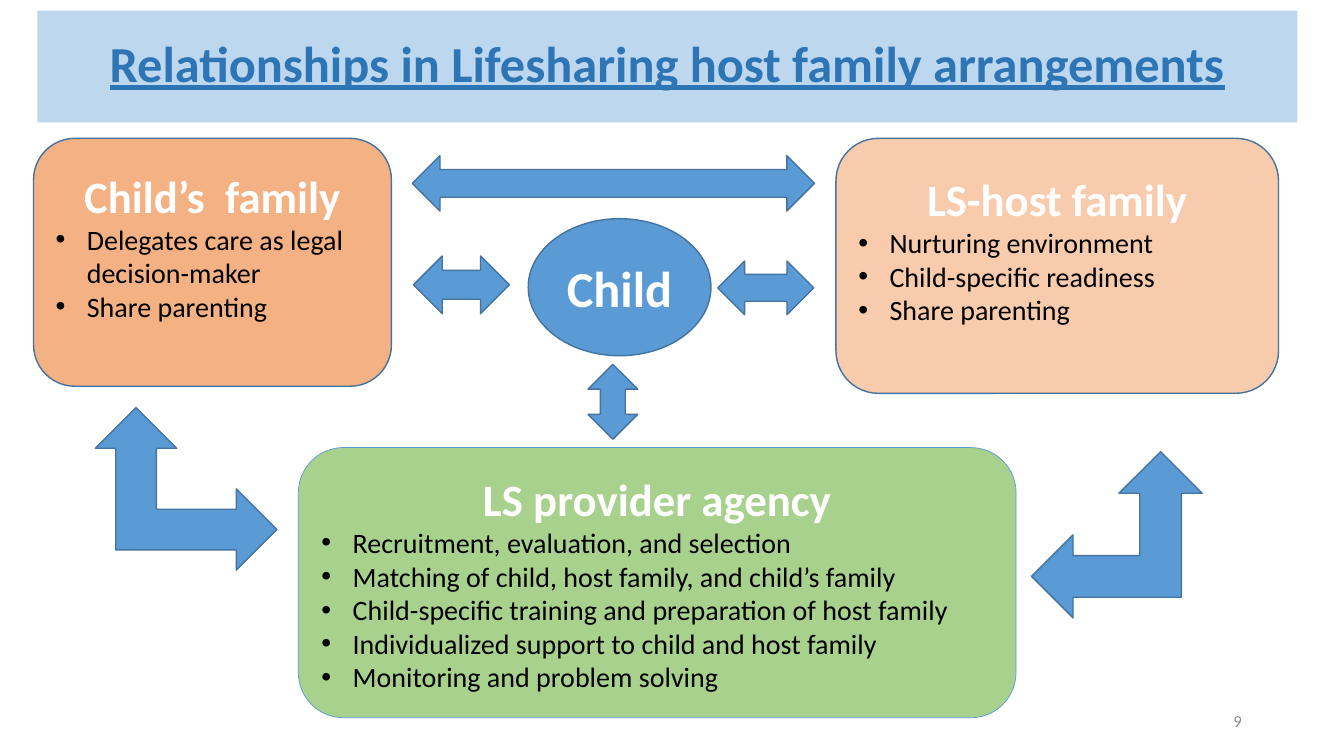
from dataclasses import dataclass

from lxml.etree import SubElement
from pptx import Presentation
from pptx.dml.color import RGBColor
from pptx.enum.shapes import MSO_SHAPE as Form
from pptx.enum.text import MSO_ANCHOR, PP_ALIGN
from pptx.oxml.ns import qn
from pptx.util import Inches, Pt


@dataclass(frozen=True)
class Theme:
    font: str = "Calibri"
    band: str = "BDD7EE"
    title: str = "2E75B6"
    blue: str = "5B9BD5"
    edge: str = "43739E"
    orange: str = "F4B183"
    peach: str = "F8CBAD"
    green: str = "A9D18E"
    white: str = "FFFFFF"
    black: str = "000000"
    gray: str = "8C8C8C"
    large: int = 36
    head: int = 32
    body: int = 20
    small: int = 12


class Board:
    """Draws on one slide; every place is left, top, width, height in percent."""

    def __init__(self, deck, theme):
        self.deck, self.theme = deck, theme
        self.slide = deck.slides.add_slide(deck.slide_layouts[6])

    def place(self, box):
        wide, high = self.deck.slide_width, self.deck.slide_height
        return [round(part * side / 100) for part, side in zip(box, (wide, high) * 2)]

    def shape(self, form, box, fill, edge=None, width=1, turn=0):
        item = self.slide.shapes.add_shape(form, *self.place(box))
        item.shadow.inherit = False
        item.fill.solid()
        item.fill.fore_color.rgb = RGBColor.from_string(fill)
        if edge:
            item.line.color.rgb = RGBColor.from_string(edge)
            item.line.width = Pt(width)
        else:
            item.line.fill.background()
        item.rotation = turn
        return item

    def frame(self, item):
        text = item.text_frame
        text.word_wrap = True
        text.vertical_anchor = MSO_ANCHOR.MIDDLE
        return text

    def label(self, para, words, size, color, bold=False, align=PP_ALIGN.CENTER):
        para.alignment = align
        run = para.add_run()
        run.text = words
        run.font.name = self.theme.font
        run.font.size = Pt(size)
        run.font.bold = bold
        run.font.color.rgb = RGBColor.from_string(color)
        return run

    def bullet(self, para, words):
        self.label(para, words, self.theme.body, self.theme.black, align=PP_ALIGN.LEFT)
        props = para._p.get_or_add_pPr()
        props.set("marL", str(Inches(0.31)))
        props.set("indent", str(-Inches(0.31)))
        SubElement(props, qn("a:buFont")).set("typeface", "Arial")
        SubElement(props, qn("a:buChar")).set("char", "•")

    def banner(self, box, words):
        look = self.theme
        para = self.frame(self.shape(Form.RECTANGLE, box, look.band)).paragraphs[0]
        para.line_spacing = 0.9
        self.label(para, words, look.large, look.title, True).font.underline = True

    def hub(self, box, words):
        look = self.theme
        item = self.shape(Form.OVAL, box, look.blue, look.edge)
        self.label(self.frame(item).paragraphs[0], words, look.large, look.white, True)

    def card(self, box, fill, head, points, edge, width=1, foot=0.05):
        """Rounded box with a heading and bullets; foot is the bottom inset in inches."""
        look = self.theme
        text = self.frame(self.shape(Form.ROUNDED_RECTANGLE, box, fill, edge, width))
        text.margin_bottom = Inches(foot)
        self.label(text.paragraphs[0], head, look.head, look.white, True)
        for point in points:
            self.bullet(text.add_paragraph(), point)

    def arrow(self, form, box, turn=0):
        self.shape(form, box, self.theme.blue, self.theme.edge, turn=turn)

    def number(self, box, words):
        text = self.frame(self.slide.shapes.add_textbox(*self.place(box)))
        self.label(text.paragraphs[0], words, self.theme.small, self.theme.gray,
                   align=PP_ALIGN.RIGHT)


def main():
    deck = Presentation()
    deck.slide_width, deck.slide_height = Inches(13.33), Inches(7.5)
    look = Theme()
    board = Board(deck, look)

    board.banner((2.78, 1.4, 93.75, 14.8),
                 "Relationships in Lifesharing host family arrangements")
    board.hub((39.3, 28.93, 13.6, 18.13), "Child")
    board.card((2.5, 18.3, 26.63, 32.8), look.orange, "Child’s  family",
               ["Delegates care as legal decision-maker", "Share parenting"],
               look.edge, foot=0.38)
    board.card((62.2, 18.3, 32.93, 33.73), look.peach, "LS-host family",
               ["Nurturing environment", "Child-specific readiness", "Share parenting"],
               look.edge, foot=0.38)
    board.card((22.2, 59.2, 53.4, 35.73), look.green, "LS provider agency",
               ["Recruitment, evaluation, and selection",
                "Matching of child, host family, and child’s family",
                "Child-specific training and preparation of host family",
                "Individualized support to child and host family",
                "Monitoring and problem solving"],
               look.blue, width=0.5)

    for form, box, turn in [
        (Form.LEFT_RIGHT_ARROW, (30.68, 20.6, 29.93, 7.33), 0),
        (Form.UP_DOWN_ARROW, (43.75, 48.2, 3.7, 9.9), 0),
        (Form.LEFT_UP_ARROW, (76.75, 59.75, 12.7, 22), 0),
        (Form.LEFT_UP_ARROW, (7.8, 52.67, 12.1, 24), 90),
        (Form.UP_DOWN_ARROW, (54.98, 31.73, 4, 12.7), 90),
        (Form.UP_DOWN_ARROW, (32.18, 31.33, 4.3, 12.7), 90),
    ]:
        board.arrow(form, box, turn)

    board.number((70.65, 92.67, 22.5, 5.33), "9")
    deck.save("out.pptx")


if __name__ == "__main__":
    main()
